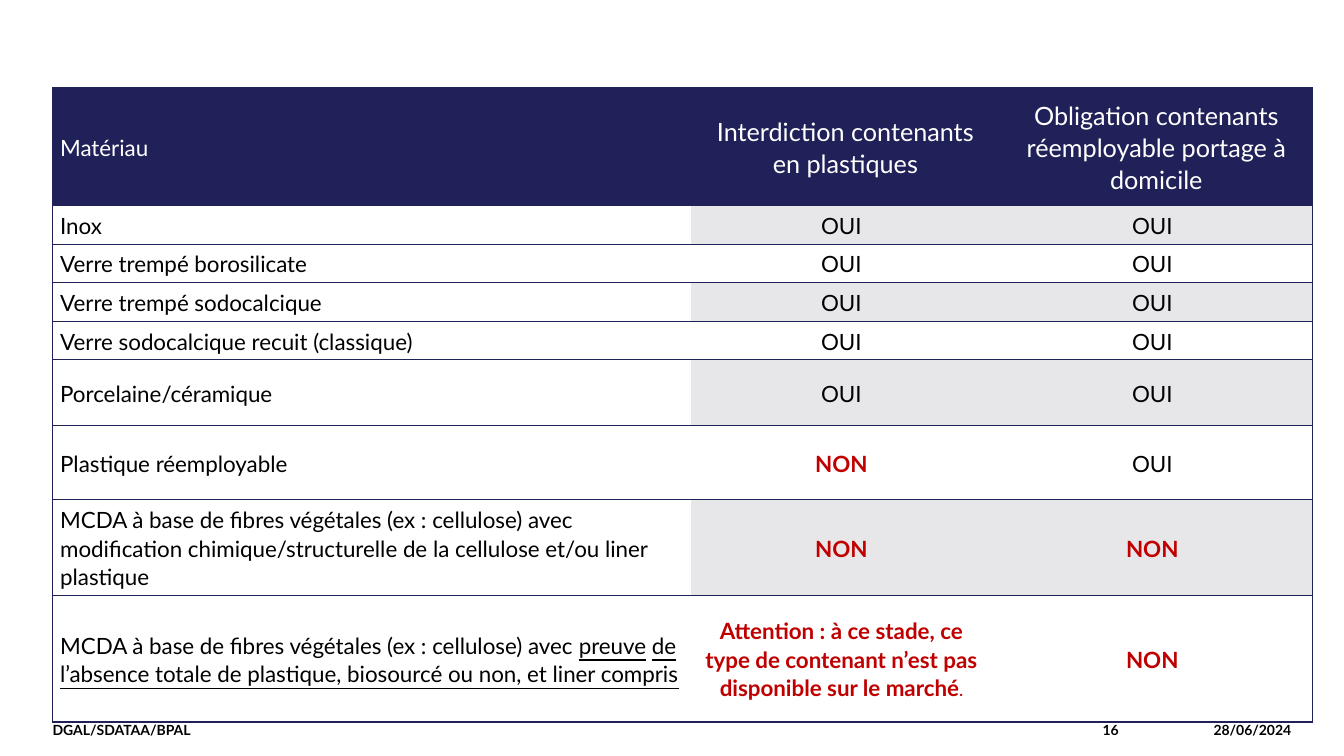
"""Build the slide comparing container materials with the two regulations."""
from lxml import etree
from pptx import Presentation
from pptx.dml.color import RGBColor
from pptx.enum.shapes import MSO_CONNECTOR
from pptx.enum.text import MSO_ANCHOR, PP_ALIGN
from pptx.oxml.ns import qn
from pptx.util import Pt

LEFT, CENTER, RIGHT = PP_ALIGN.LEFT, PP_ALIGN.CENTER, PP_ALIGN.RIGHT
MIDDLE = MSO_ANCHOR.MIDDLE
STRAIGHT = MSO_CONNECTOR.STRAIGHT
FONT = "Lato"
COLORS = {"navy": "21215A", "grey": "E7E7E9", "white": "FFFFFF",
          "black": "000000", "red": "C00000"}

OUI = [("OUI", {})]
NON = [("NON", {"color": "red", "bold": True})]
HEADERS = [
    [("Matériau", {"color": "white"})],
    [("Interdiction contenants en plastiques", {"color": "white", "size": 18})],
    [("Obligation contenants réemployable portage à domicile",
      {"color": "white", "size": 18})],
]
MATERIALS = [
    ([("Inox", {})], OUI, OUI),
    ([("Verre trempé borosilicate", {})], OUI, OUI),
    ([("Verre trempé sodocalcique", {})], OUI, OUI),
    ([("Verre sodocalcique recuit (classique)", {})], OUI, OUI),
    ([("Porcelaine/céramique", {})], OUI, OUI),
    ([("Plastique réemployable", {})], NON, OUI),
    ([("MCDA à base de fibres végétales (ex : cellulose) avec modification "
       "chimique/structurelle de la cellulose et/ou liner plastique", {})], NON, NON),
    ([("MCDA à base de fibres végétales (ex : cellulose) avec ", {}),
      ("preuve", {"underline": True}),
      (" ", {}),
      ("de l’absence totale de plastique, biosourcé ou non, et liner compris",
       {"underline": True})],
     [("Attention : à ce stade, ce type de contenant n’est pas disponible "
       "sur le marché", {"color": "red", "bold": True}),
      (".", {"color": "red", "bold": True, "size": 11})],
     NON),
]
MARGIN_LEFT = 37.6
FOOTER_TOP = 502.56
COLUMN_WIDTHS = [455.76, 215.28, 228.96]
ROW_HEIGHTS = [84.24, 25.92, 25.92, 25.92, 25.92, 46.8, 53.1, 54, 90.3]
FOOTERS = [
    ("DGAL/SDATAA/BPAL", MARGIN_LEFT, 619.92, LEFT),
    ("16", 657.36, 141.84, RIGHT),
    ("28/06/2024", 799.2, 123.12, RIGHT),
]


def add_run(paragraph, text, color="black", size=16, bold=False, underline=False):
    """Append one formatted run to a paragraph."""
    run = paragraph.add_run()
    run.text = text
    run.font.name = FONT
    run.font.size = Pt(size)
    run.font.bold = bold
    run.font.underline = underline
    run.font.color.rgb = RGBColor.from_string(COLORS[color])


def set_borders(cell, visible_sides):
    """Draw the named sides of a cell in navy and clear the others."""
    properties = cell._tc.get_or_add_tcPr()
    for side in "LRTB":
        line = etree.SubElement(properties, qn(f"a:ln{side}"), w=str(Pt(0.96)))
        if side in visible_sides:
            fill = etree.SubElement(line, qn("a:solidFill"))
            etree.SubElement(fill, qn("a:srgbClr"), val=COLORS["navy"])
        else:
            etree.SubElement(line, qn("a:noFill"))


def fill_cell(cell, runs, fill, sides, alignment, indent):
    """Write and format one table cell."""
    set_borders(cell, sides)
    cell.fill.solid()
    cell.fill.fore_color.rgb = RGBColor.from_string(COLORS[fill])
    cell.vertical_anchor = MIDDLE
    cell.margin_left = cell.margin_right = Pt(5.4)
    cell.margin_top = cell.margin_bottom = Pt(3.5)
    paragraph = cell.text_frame.paragraphs[0]
    paragraph.alignment = alignment
    paragraph.line_spacing = 1.07
    if indent:
        paragraph._p.get_or_add_pPr().set("marL", str(Pt(indent)))
    for text, style in runs:
        add_run(paragraph, text, **style)


def add_materials_table(slide):
    """Add the table of materials, with grey answers on every other row."""
    rows = [HEADERS, *MATERIALS]
    table = slide.shapes.add_table(
        len(rows), len(HEADERS), Pt(MARGIN_LEFT), Pt(62.64),
        Pt(sum(COLUMN_WIDTHS)), Pt(sum(ROW_HEIGHTS))).table
    table.first_row = False
    table.horz_banding = False
    for column, width in zip(table.columns, COLUMN_WIDTHS):
        column.width = Pt(width)
    for row, height in zip(table.rows, ROW_HEIGHTS):
        row.height = Pt(height)
    for row_index, row in enumerate(rows):
        for column_index, runs in enumerate(row):
            is_answer = column_index > 0
            if row_index == 0:
                fill = "navy"
            else:
                fill = "grey" if is_answer and row_index % 2 else "white"
            fill_cell(table.cell(row_index, column_index), runs, fill,
                      ("LTB", "TB", "TBR")[column_index],
                      CENTER if is_answer else LEFT,
                      5.76 if is_answer and row_index == 0 else 0)


def add_footer_rule(slide):
    """Add the thin rule along the top of the footer."""
    rule = slide.shapes.add_connector(
        STRAIGHT, Pt(MARGIN_LEFT), Pt(FOOTER_TOP), Pt(922.32), Pt(FOOTER_TOP))
    rule.line.width = Pt(0.8)
    rule.line.color.rgb = RGBColor.from_string(COLORS["black"])
    etree.SubElement(rule._element.spPr, qn("a:effectLst"))


def add_footer(slide, text, left, width, alignment):
    """Add one bold footer text."""
    box = slide.shapes.add_textbox(Pt(left), Pt(FOOTER_TOP), Pt(width), Pt(37.44))
    frame = box.text_frame
    frame.word_wrap = True
    frame.vertical_anchor = MIDDLE
    frame.margin_left = frame.margin_right = Pt(0)
    frame.margin_top = frame.margin_bottom = Pt(0)
    paragraph = frame.paragraphs[0]
    paragraph.alignment = alignment
    add_run(paragraph, text, size=10, bold=True)


def main():
    """Build and save the presentation."""
    presentation = Presentation()
    presentation.slide_width = Pt(960)
    presentation.slide_height = Pt(540)
    slide = presentation.slides.add_slide(presentation.slide_layouts[6])
    add_footer_rule(slide)
    for footer in FOOTERS:
        add_footer(slide, *footer)
    add_materials_table(slide)
    presentation.save("out.pptx")


if __name__ == "__main__":
    main()
